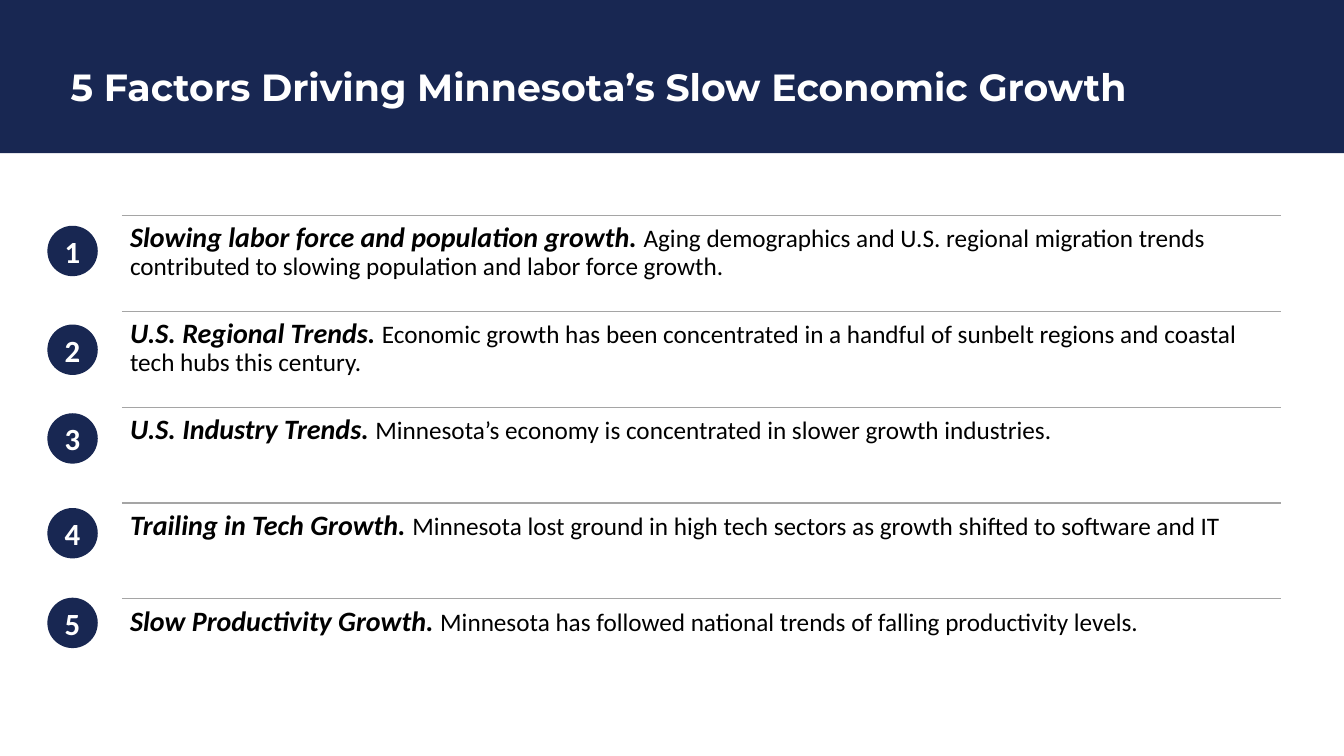
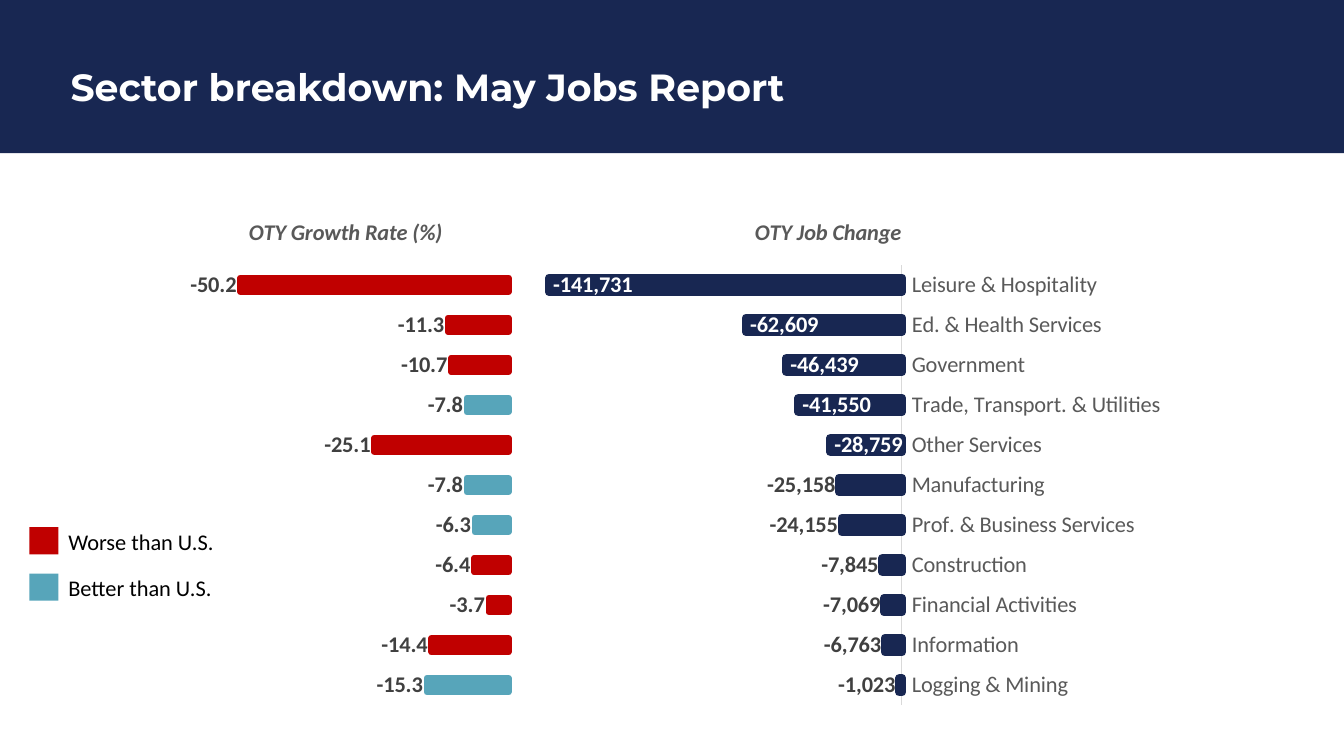
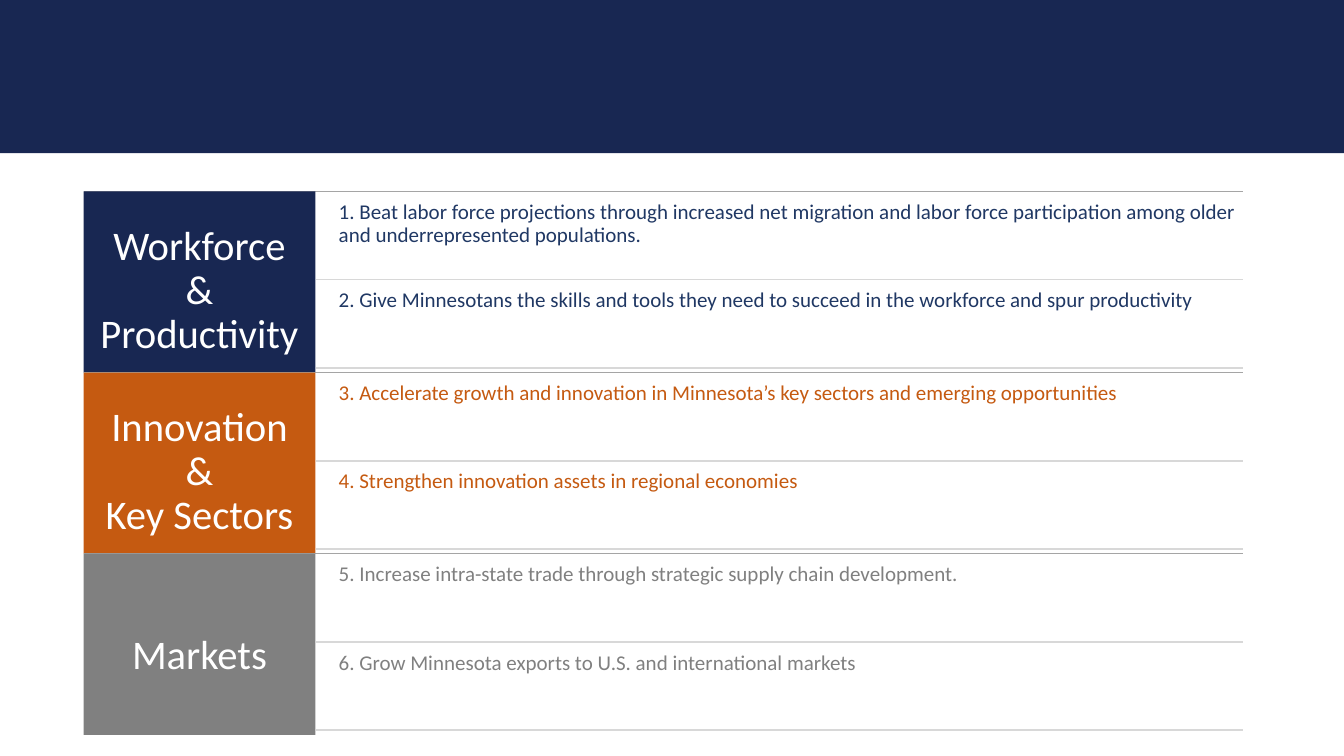
from dataclasses import dataclass
from typing import Optional

from lxml.etree import Element, SubElement
from pptx import Presentation
from pptx.chart.data import CategoryChartData
from pptx.dml.color import RGBColor
from pptx.enum.chart import (XL_CHART_TYPE, XL_LABEL_POSITION, XL_TICK_LABEL_POSITION,
                             XL_TICK_MARK)
from pptx.enum.shapes import MSO_CONNECTOR, MSO_SHAPE
from pptx.enum.text import MSO_ANCHOR, PP_ALIGN
from pptx.oxml.ns import qn
from pptx.util import Inches, Pt


@dataclass(frozen=True)
class Theme:
    navy: RGBColor = RGBColor.from_string("182752")
    ink: RGBColor = RGBColor.from_string("203864")
    orange: RGBColor = RGBColor.from_string("C55A11")
    gray: RGBColor = RGBColor.from_string("808080")
    red: RGBColor = RGBColor.from_string("C00000")
    teal: RGBColor = RGBColor.from_string("57A5BA")
    rule: RGBColor = RGBColor.from_string("A5A5A5")
    light_rule: RGBColor = RGBColor.from_string("D8D8D8")
    axis: RGBColor = RGBColor.from_string("D9D9D9")
    chart_text: RGBColor = RGBColor.from_string("595959")
    chart_label: RGBColor = RGBColor.from_string("404040")
    white: RGBColor = RGBColor.from_string("FFFFFF")
    black: RGBColor = RGBColor.from_string("000000")
    title_font: str = "Montserrat"
    body_font: str = "Calibri"
    title: int = 27
    pillar: int = 29
    badge: int = 22
    lead: int = 20
    body: int = 18
    chart: int = 16
    goal: int = 15


T = Theme()


@dataclass(frozen=True)
class Factor:
    lead: str
    detail: str
    badge_top: float


@dataclass(frozen=True)
class Pillar:
    label: tuple[str, ...]
    top_inset: float
    fill: RGBColor
    goal_color: RGBColor
    goals: tuple[str, str]


@dataclass(frozen=True)
class BarChart:
    title: str
    title_x: float
    left: float
    width: float
    plot_x: float
    plot_w: float
    categories: tuple[str, ...]
    values: tuple[float, ...]
    number_format: str
    minimum: float
    color: RGBColor
    outline: float
    show_categories: bool
    red_points: tuple[int, ...] = ()
    inside_labels: tuple[int, ...] = ()


FACTORS = (
    Factor("Slowing labor force and population growth. ",
           "Aging demographics and U.S. regional migration trends contributed to slowing "
           "population and labor force growth.", 2.24),
    Factor("U.S. Regional Trends. ",
           "Economic growth has been concentrated in a handful of sunbelt regions and "
           "coastal tech hubs this century.", 3.22),
    Factor("U.S. Industry Trends. ",
           "Minnesota’s economy is concentrated in slower growth industries.", 4.1),
    Factor("Trailing in Tech Growth. ",
           "Minnesota lost ground in high tech sectors as growth shifted to software and IT",
           5.04),
    Factor("Slow Productivity Growth. ",
           "Minnesota has followed national trends of falling productivity levels.", 5.93),
)

SECTORS = ("Logging & Mining", "Information", "Financial Activities", "Construction",
           "Prof. & Business Services", "Manufacturing", "Other Services",
           "Trade, Transport. & Utilities", "Government", "Ed. & Health Services",
           "Leisure & Hospitality")

CHARTS = (
    BarChart("OTY Job Change", 0.38, 4.86, 6.81, 0.02, 0.58, SECTORS,
             (-1023, -6763, -7069, -7845, -24155, -25158, -28759, -41550, -46439,
              -62609, -141731),
             "#,##0", -160000, T.navy, 6, True, inside_labels=(6, 7, 8, 9, 10)),
    BarChart("OTY Growth Rate (%)", 0.19, 1.8, 3.31, 0.02, 0.96,
             tuple(str(n) for n in range(1, 12)),
             (-15.3, -14.4, -3.7, -6.4, -6.3, -7.8, -25.1, -7.8, -10.7, -11.3, -50.2),
             "0.0", -60, T.teal, 4.5, False, red_points=(1, 2, 3, 6, 8, 9, 10)),
)

PILLARS = (
    Pillar(("Workforce", "&", "Productivity"), 0.34, T.navy, T.ink,
           ("1. Beat labor force projections through increased net migration and labor "
            "force participation among older and underrepresented populations.",
            "2. Give Minnesotans the skills and tools they need to succeed in the "
            "workforce and spur productivity")),
    Pillar(("Innovation", "&", "Key Sectors"), 0.34, T.orange, T.orange,
           ("3. Accelerate growth and innovation in Minnesota’s key sectors and emerging "
            "opportunities",
            "4. Strengthen innovation assets in regional economies")),
    Pillar(("Markets",), 0.8, T.gray, T.gray,
           ("5. Increase intra-state trade through strategic supply chain development.",
            "6. Grow Minnesota exports to U.S. and international markets")),
)


# Drawing helpers
def style_font(font, size: float, color: RGBColor, bold: bool = False,
               italic: bool = False, name: str = T.body_font) -> None:
    font.name, font.size, font.bold, font.italic = name, Pt(size), bold, italic
    font.color.rgb = color


def add_run(p, text: str, size: float, color: RGBColor, **style) -> None:
    r = p.add_run()
    r.text = text
    style_font(r.font, size, color, **style)


def set_insets(tf, inset: float, top: Optional[float] = None) -> None:
    tf.margin_left = tf.margin_right = tf.margin_bottom = Inches(inset)
    tf.margin_top = Inches(inset if top is None else top)


def add_shape(s, kind: MSO_SHAPE, x: float, y: float, w: float, h: float, fill: RGBColor):
    sp = s.shapes.add_shape(kind, Inches(x), Inches(y), Inches(w), Inches(h))
    sp.shadow.inherit = False
    sp.fill.solid()
    sp.fill.fore_color.rgb = fill
    sp.line.fill.background()
    return sp


def add_text(s, x: float, y: float, w: float, h: float, inset: Optional[float] = None):
    tf = s.shapes.add_textbox(Inches(x), Inches(y), Inches(w), Inches(h)).text_frame
    tf.word_wrap = True
    if inset is not None:
        set_insets(tf, inset)
    return tf.paragraphs[0]


def add_rule(s, x1: float, x2: float, y: float, color: RGBColor) -> None:
    line = s.shapes.add_connector(MSO_CONNECTOR.STRAIGHT, Inches(x1), Inches(y),
                                  Inches(x2), Inches(y))
    line.line.color.rgb = color
    line.line.width = Pt(1)
    SubElement(line.element.find(qn("p:spPr")), qn("a:effectLst"))


def set_layout(parent, index: int, inner: bool, **fractions: float) -> None:
    for old in parent.findall(qn("c:layout")):
        parent.remove(old)
    layout = Element(qn("c:layout"))
    parent.insert(index, layout)
    manual = SubElement(layout, qn("c:manualLayout"))
    if inner:
        SubElement(manual, qn("c:layoutTarget")).set("val", "inner")
    for mode in ("xMode", "yMode"):
        SubElement(manual, qn(f"c:{mode}")).set("val", "edge")
    for key, value in fractions.items():
        SubElement(manual, qn(f"c:{key}")).set("val", str(value))


def paint_bar(fmt, color: RGBColor, outline: float) -> None:
    fmt.fill.solid()
    fmt.fill.fore_color.rgb = color
    fmt.line.color.rgb = color
    fmt.line.width = Pt(outline)


def add_bar_chart(s, spec: BarChart) -> None:
    data = CategoryChartData(number_format=spec.number_format)
    data.categories = spec.categories
    data.add_series(spec.title, spec.values)
    chart = s.shapes.add_chart(XL_CHART_TYPE.BAR_CLUSTERED, Inches(spec.left), Inches(1.96),
                               Inches(spec.width), Inches(5.14), data).chart
    style_font(chart.font, T.chart, T.black)
    chart.has_legend = False

    # Title and plot area
    chart.has_title = True
    add_run(chart.chart_title.text_frame.paragraphs[0], spec.title, T.chart, T.chart_text,
            bold=True, italic=True)
    set_layout(chart.chart_title.element, 1, False, x=spec.title_x, y=0.03)
    set_layout(chart.element.find(".//" + qn("c:plotArea")), 0, True,
               x=spec.plot_x, y=0.13, w=spec.plot_w, h=0.85)

    # Axes
    values, cats = chart.value_axis, chart.category_axis
    values.minimum_scale, values.maximum_scale = spec.minimum, 0
    values.has_major_gridlines = False
    values.visible = False
    cats.visible = spec.show_categories
    cats.major_tick_mark = XL_TICK_MARK.NONE
    cats.tick_label_position = XL_TICK_LABEL_POSITION.HIGH
    cats.format.line.color.rgb = T.axis
    cats.format.line.width = Pt(0.75)
    style_font(cats.tick_labels.font, T.chart, T.chart_text)

    # Bars and labels
    plot = chart.plots[0]
    plot.gap_width = 182
    plot.vary_by_categories = False
    series = plot.series[0]
    series.invert_if_negative = False
    paint_bar(series.format, spec.color, spec.outline)
    for i in spec.red_points:
        paint_bar(series.points[i].format, T.red, spec.outline)
    labels = series.data_labels
    labels.show_value = True
    labels.number_format = spec.number_format
    labels.number_format_is_linked = False
    labels.position = XL_LABEL_POSITION.OUTSIDE_END
    style_font(labels.font, T.chart, T.chart_label, bold=True)
    for i in spec.inside_labels:
        label = series.points[i].data_label
        style_font(label.font, T.chart, T.white, bold=True)
        label.position = XL_LABEL_POSITION.INSIDE_END


# Shared layout: navy band and title position
def prepare_layout(prs):
    layout = prs.slide_layouts.get_by_name("Title Only")
    title = layout.placeholders[0]
    title.left, title.top = Inches(0.6), Inches(0.32)
    title.width, title.height = Inches(12.11), Inches(1.14)
    return layout


def add_band(s) -> None:
    band = add_shape(s, MSO_SHAPE.RECTANGLE, 0, 0, 13.33, 1.52, T.navy)
    s.slide_layout.shapes.element.insert(2, band.element)


def add_slide(prs, layout, title: Optional[str] = None):
    s = prs.slides.add_slide(layout)
    sp = s.shapes.title
    if title is None:
        sp.element.getparent().remove(sp.element)
        return s
    sp.text_frame.vertical_anchor = MSO_ANCHOR.MIDDLE
    p = sp.text_frame.paragraphs[0]
    p.alignment = PP_ALIGN.LEFT
    p.line_spacing = 0.9
    add_run(p, title, T.title, T.white, bold=True, name=T.title_font)
    return s


# Slide 1: numbered factors
def draw_factors(s) -> None:
    for i, factor in enumerate(FACTORS):
        y = 2.14 + 0.95 * i
        add_rule(s, 1.21, 12.71, y, T.rule)
        p = add_text(s, 1.21, y, 11.5, 0.95, 0.08)
        p.line_spacing = 0.9
        add_run(p, factor.lead, T.lead, T.black, bold=True, italic=True)
        add_run(p, factor.detail, T.body, T.black)
        badge = add_shape(s, MSO_SHAPE.OVAL, 0.47, factor.badge_top, 0.5, 0.5, T.navy)
        tf = badge.text_frame
        set_insets(tf, 0)
        tf.vertical_anchor = MSO_ANCHOR.MIDDLE
        tf.paragraphs[0].alignment = PP_ALIGN.CENTER
        add_run(tf.paragraphs[0], str(i + 1), T.badge, T.white, bold=True)


# Slide 2: two bar charts and a key
def draw_sectors(s) -> None:
    for spec in CHARTS:
        add_bar_chart(s, spec)
    key = (("Worse than U.S.", T.red), ("Better than U.S.", T.teal))
    for i, (text, color) in enumerate(key):
        y = 5.19 + 0.46 * i
        add_run(add_text(s, 0.58, y, 1.83, 0.37), text, T.chart, T.black)
        add_shape(s, MSO_SHAPE.RECTANGLE, 0.29, y + 0.04, 0.29, 0.27, color)


# Slide 3: pillars with two goals each
def draw_pillars(s) -> None:
    pillar_pitch = 5.39 / len(PILLARS)
    goal_pitch = 1.75 / 2
    for i, pillar in enumerate(PILLARS):
        y = 1.9 + pillar_pitch * i
        add_rule(s, 0.83, 12.33, y, T.rule)
        block = add_shape(s, MSO_SHAPE.RECTANGLE, 0.83, y, 2.3, pillar_pitch, pillar.fill)
        tf = block.text_frame
        tf.word_wrap = True
        tf.vertical_anchor = MSO_ANCHOR.TOP
        set_insets(tf, 0.07, pillar.top_inset)
        for n, text in enumerate(pillar.label):
            p = tf.add_paragraph() if n else tf.paragraphs[0]
            p.alignment = PP_ALIGN.CENTER
            p.line_spacing = 0.9
            add_run(p, text, T.pillar, T.white)
        for n, goal in enumerate(pillar.goals):
            top = y + goal_pitch * n
            p = add_text(s, 3.3, top + 0.04, 9.03, 0.84, 0.06)
            p.line_spacing = 0.9
            add_run(p, goal, T.goal, pillar.goal_color)
            add_rule(s, 3.13, 12.33, top + goal_pitch, T.light_rule)


def main() -> None:
    prs = Presentation()
    prs.slide_width, prs.slide_height = Inches(13.33), Inches(7.5)
    layout = prepare_layout(prs)
    s = add_slide(prs, layout, "5 Factors Driving Minnesota’s Slow Economic Growth")
    add_band(s)
    draw_factors(s)
    draw_sectors(add_slide(prs, layout, "Sector breakdown: May Jobs Report"))
    draw_pillars(add_slide(prs, layout))
    prs.save("out.pptx")


if __name__ == "__main__":
    main()
